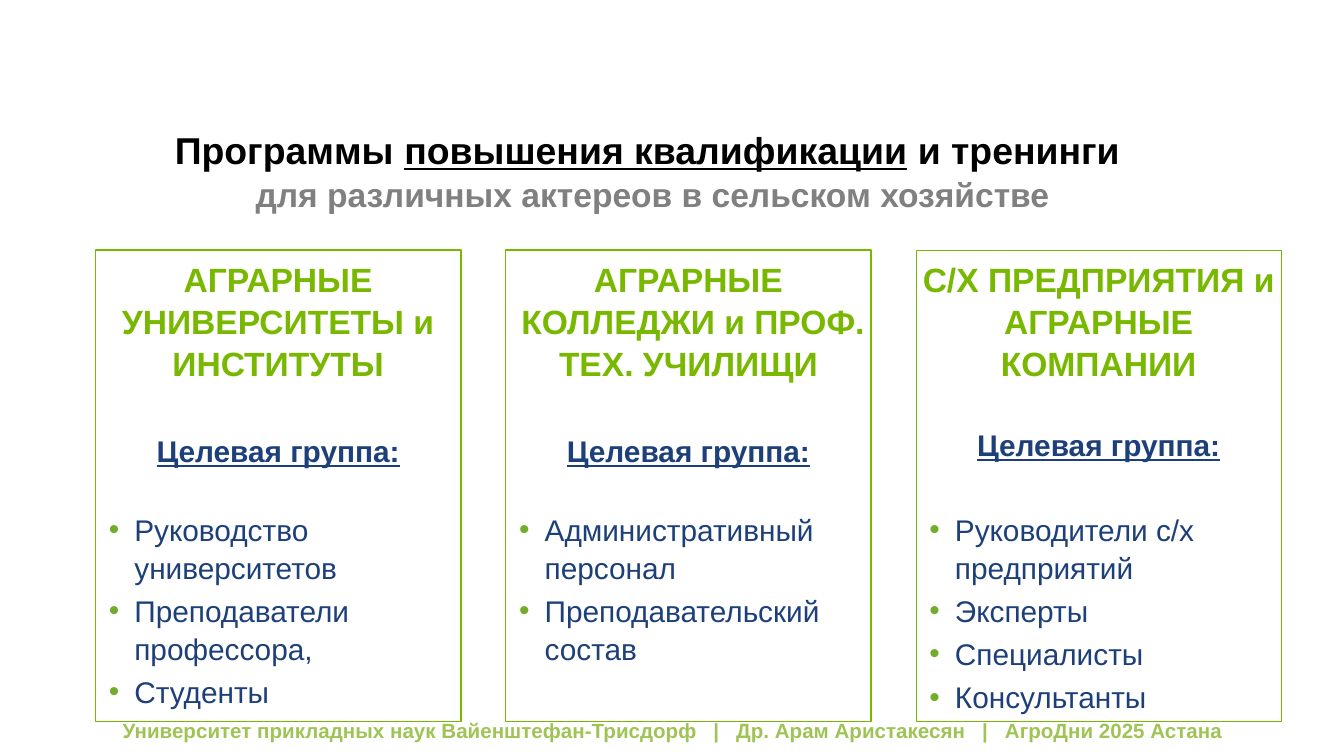
from dataclasses import dataclass

from lxml import etree
from pptx import Presentation
from pptx import util as u
from pptx.dml import color as dml
from pptx.enum import shapes, text
from pptx.oxml import ns


@dataclass(frozen=True)
class Theme:
    """Colours, font and type sizes of the slide."""
    font: str = "Arial"
    black: str = "000000"
    grey: str = "808080"
    green: str = "79B800"
    navy: str = "1E407A"
    bullet: str = "71AD2A"
    pale: str = "9FC455"
    white: str = "FFFFFF"
    title: int = 20
    head: int = 18
    body: int = 16
    foot: int = 11


THEME = Theme()
GROUPS = [
    (["AГРАРНЫЕ УНИВЕРСИТЕТЫ и ИНСТИТУТЫ"], 0.75, (25.3, 22.3),
     ["Руководство университетов", "Преподаватели профессора,", "Студенты"]),
    (["AГРАРНЫЕ", " КОЛЛЕДЖИ и ПРОФ. ТЕХ. УЧИЛИЩИ"], 0.75, (25.3, 22.3),
     ["Административный персонал", "Преподавательский состав"]),
    (["С/Х ПРЕДПРИЯТИЯ и АГРАРНЫЕ КОМПАНИИ"], 0.25, (22.3, 25.3),
     ["Руководители с/х предприятий", "Эксперты", "Специалисты",
      "Консультанты"]),
]


def rgb(code):
    """Turn a hex code into a colour."""
    return dml.RGBColor.from_string(code)


def place(shape, left, top, width, height):
    """Set a shape's box in points."""
    shape.left, shape.top = u.Pt(left), u.Pt(top)
    shape.width, shape.height = u.Pt(width), u.Pt(height)


def frame(shape, inset=0):
    """Prepare a wrapped, top-anchored text frame."""
    body = shape.text_frame
    body.word_wrap = True
    body.auto_size = text.MSO_AUTO_SIZE.NONE
    body.vertical_anchor = text.MSO_ANCHOR.TOP
    body.margin_left = body.margin_right = 0
    body.margin_top, body.margin_bottom = u.Pt(inset), 0
    return body


def run(para, words, size, tint, bold=True, line=False):
    """Add one formatted run."""
    part = para.add_run()
    part.text = words
    font = part.font
    font.name, font.size = THEME.font, u.Pt(size)
    font.bold, font.underline = bold, line
    font.color.rgb = rgb(tint)


def style(para, before=0, align=text.PP_ALIGN.CENTER):
    """Set a paragraph's alignment and spacing."""
    para.alignment = align
    para.line_spacing = 1.05
    para.space_before, para.space_after = u.Pt(before), u.Pt(0)


def mark(para, dot):
    """Give a paragraph a hanging bullet, or none."""
    props = para._p.get_or_add_pPr()
    props.set("marL", str(u.Pt(20.9 if dot else 0)))
    props.set("indent", str(u.Pt(-13.7 if dot else 0)))
    if not dot:
        etree.SubElement(props, ns.qn("a:buNone"))
        return
    tint = etree.SubElement(props, ns.qn("a:buClr"))
    etree.SubElement(tint, ns.qn("a:srgbClr"), val=THEME.bullet)
    etree.SubElement(props, ns.qn("a:buFont"), typeface=THEME.font)
    etree.SubElement(props, ns.qn("a:buChar"), char="•")


def title(shape):
    """Fill the two-line title."""
    place(shape, 56.9, 67, 585.4, 59.8)
    para = frame(shape).paragraphs[0]
    style(para)
    run(para, "Программы ", THEME.title, THEME.black)
    run(para, "повышения квалификации", THEME.title, THEME.black, line=True)
    run(para, " и тренинги ", THEME.title, THEME.black)
    para.add_line_break()
    run(para, "для различных актереов в сельском хозяйстве",
        THEME.head, THEME.grey)


def panel(shape, left, head, width, gaps, items):
    """Fill one outlined audience panel."""
    place(shape, left, 133.9, 195.8, 252.7)
    shape.line.color.rgb = rgb(THEME.green)
    shape.line.width = u.Pt(width)
    body = frame(shape, 3.6)
    para = body.paragraphs[0]
    mark(para, False)
    style(para)
    for row, words in enumerate(head):
        if row:
            para.add_line_break()
        run(para, words, THEME.head, THEME.green)
    para = body.add_paragraph()
    mark(para, False)
    style(para, gaps[0])
    run(para, "Целевая группа:", THEME.body, THEME.navy, line=True)
    for row, words in enumerate(items):
        para = body.add_paragraph()
        mark(para, True)
        style(para, 3 if row else gaps[1], text.PP_ALIGN.LEFT)
        run(para, words, THEME.body, THEME.navy, bold=False)


def footer(slide):
    """Add the footer band behind the panels."""
    band = slide.shapes.add_shape(
        shapes.MSO_SHAPE.RECTANGLE, u.Pt(0.7), u.Pt(380.9), u.Pt(720), u.Pt(20.9))
    band.shadow.inherit = False
    band.fill.solid()
    band.fill.fore_color.rgb = rgb(THEME.white)
    band.line.fill.background()
    para = frame(band, 3.6).paragraphs[0]
    para.alignment = text.PP_ALIGN.CENTER
    run(para, "Университет прикладных наук Вайенштефан-Трисдорф   |   "
        "Др. Арам Аристакесян   |   АгроДни 2025 Астана",
        THEME.foot, THEME.pale)
    slide.shapes._spTree.insert(2, band._element)


def main():
    """Build and save the slide."""
    deck = Presentation()
    deck.slide_width, deck.slide_height = u.Pt(720), u.Pt(405)
    slide = deck.slides.add_slide(deck.slide_layouts.get_by_name("Comparison"))
    head, *boxes = slide.placeholders
    title(head)
    for col, (box, group) in enumerate(zip(boxes, GROUPS)):
        panel(box, 51.1 + 219.8 * col, *group)
    for spare in boxes[len(GROUPS):]:
        spare._element.getparent().remove(spare._element)
    footer(slide)
    deck.save("out.pptx")


if __name__ == "__main__":
    main()
